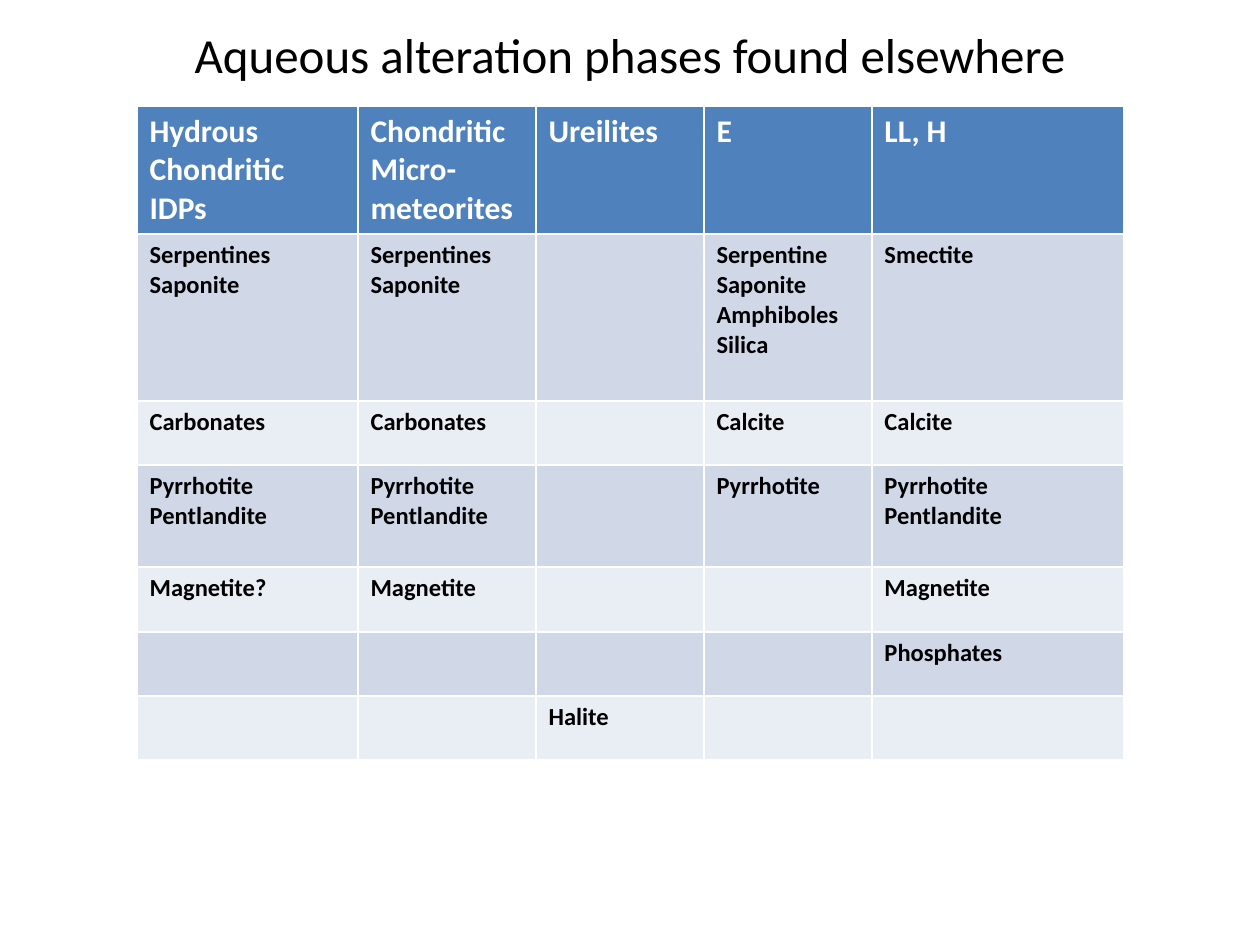
from pptx import Presentation
from pptx.dml.color import RGBColor
from pptx.enum.text import MSO_ANCHOR, PP_ALIGN
from pptx.util import Pt

MIDDLE = MSO_ANCHOR.MIDDLE
CENTER = PP_ALIGN.CENTER
SCALE = 914400 // 126
WHITE, BLACK, BLUE = "FFFFFF", "000000", "4F81BD"
BANDS = ["E9EDF4", "D0D8E8"]

COLS = [221, 178, 168, 168, 252]
ROWS = [127, 167, 64, 102, 65, 64, 64]
CELLS = [
    ["Hydrous Chondritic IDPs", "Chondritic Micro-meteorites", "Ureilites", "E", "LL, H"],
    ["Serpentines Saponite", "Serpentines Saponite", "",
     "Serpentine Saponite Amphiboles Silica", "Smectite"],
    ["Carbonates", "Carbonates", "", "Calcite", "Calcite"],
    ["Pyrrhotite Pentlandite", "Pyrrhotite Pentlandite", "",
     "Pyrrhotite", "Pyrrhotite\vPentlandite"],
    ["Magnetite?", "Magnetite", "", "", "Magnetite"],
    ["", "", "", "", "Phosphates"],
    ["", "", "Halite", "", ""],
]


def px(*sizes):
    return [size * SCALE for size in sizes]


def color(code):
    return RGBColor.from_string(code)


class Page:
    """Holds the text style and the current slide."""

    def __init__(self, slide, face="Calibri"):
        self.slide = slide
        self.face = face

    def style(self, para, size, code, bold=False):
        font = para.font
        font.name, font.size, font.bold = self.face, Pt(size), bold
        font.color.rgb = color(code)

    def title(self, text, left, top, width, height):
        shape = self.slide.shapes.title
        shape.left, shape.top, shape.width, shape.height = px(left, top, width, height)
        frame = shape.text_frame
        frame.text = text
        frame.vertical_anchor = MIDDLE
        para = frame.paragraphs[0]
        para.alignment = CENTER
        self.style(para, 28, BLACK)

    def table(self, cells, left, top, cols, rows):
        box = px(left, top, sum(cols), sum(rows))
        table = self.slide.shapes.add_table(len(rows), len(cols), *box).table
        for col, width in zip(table.columns, px(*cols)):
            col.width = width
        for row, height in zip(table.rows, px(*rows)):
            row.height = height
        for i, texts in enumerate(cells):
            fill = BANDS[i % 2] if i else BLUE
            size, ink = (14, BLACK) if i else (18, WHITE)
            for j, text in enumerate(texts):
                cell = table.cell(i, j)
                cell.text = text
                cell.fill.solid()
                cell.fill.fore_color.rgb = color(fill)
                self.style(cell.text_frame.paragraphs[0], size, ink, True)


def main():
    deck = Presentation()
    deck.slide_width, deck.slide_height = px(1260, 945)
    page = Page(deck.slides.add_slide(deck.slide_layouts[5]))
    page.title("Aqueous alteration phases found elsewhere", 63, 10, 1134, 88)
    page.table(CELLS, 137, 106, COLS, ROWS)
    deck.save("out.pptx")


if __name__ == "__main__":
    main()
